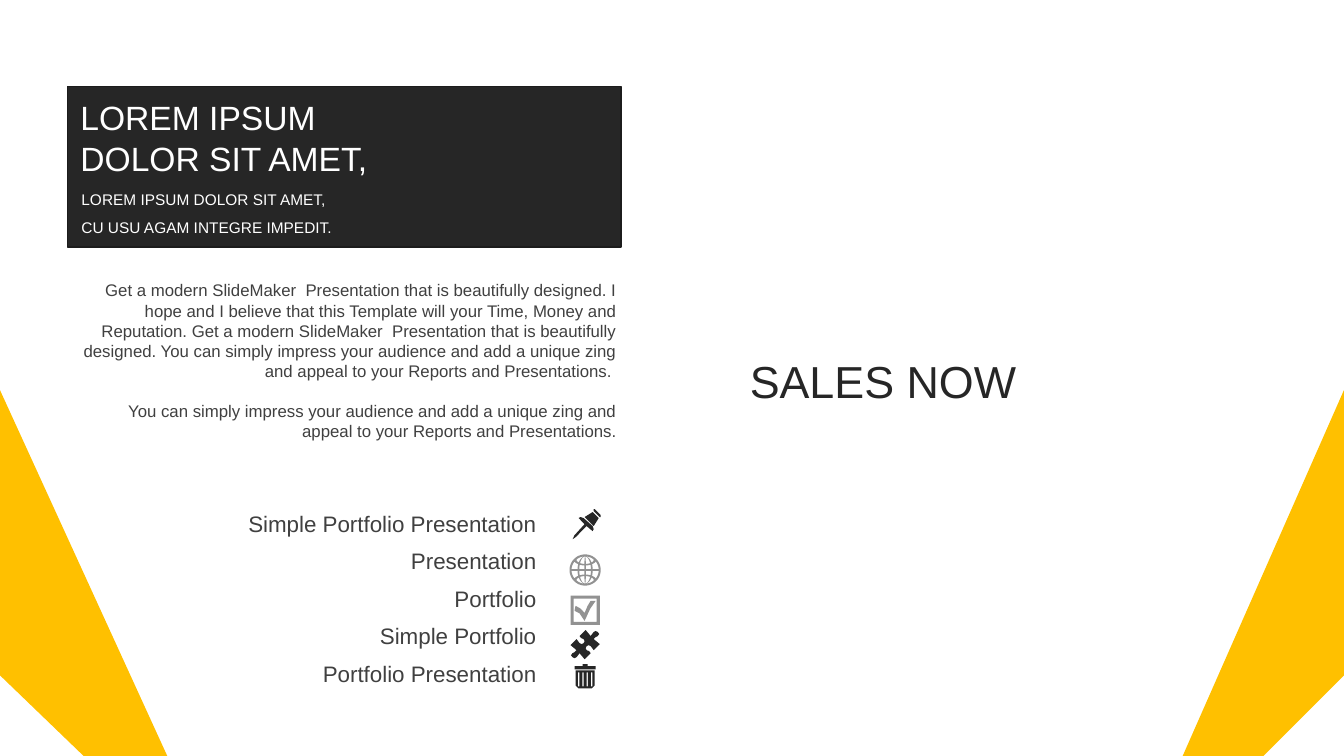
"""Build a portfolio slide with a heading panel, an icon list and corner wedges."""
import dataclasses
import math
import typing

import lxml.etree
import pptx
import pptx.dml.color
import pptx.enum.shapes
import pptx.enum.text
import pptx.oxml.ns
import pptx.util

COLUMNS, ROWS = 160, 90
CELL = pptx.util.Inches(1) / 12
ICON_STEP = 0.12
FONT = "Arial"
COLORS = {"ink": "262626", "edge": "1C1C1C", "body": "404040",
          "gray": "929292", "accent": "FFC000", "white": "FFFFFF"}
ALIGN = pptx.enum.text.PP_ALIGN
ANCHOR = pptx.enum.text.MSO_ANCHOR

Point = tuple[float, float]
Outline = list[Point]


@dataclasses.dataclass(frozen=True)
class Area:
    """A rectangle in grid columns and rows."""
    left: float
    top: float
    width: float
    height: float

    def emu(self) -> list[int]:
        """Return left, top, width and height in EMU."""
        return [cells(side) for side in dataclasses.astuple(self)]


@dataclasses.dataclass(frozen=True)
class Feature:
    """A list label with the icon beside it."""
    label: str
    column: float
    row: float
    color: str
    outlines: list[Outline]


def cells(count: float) -> int:
    """Convert grid cells to EMU."""
    return round(count * CELL)


def rgb(name: str) -> pptx.dml.color.RGBColor:
    """Look up a palette colour."""
    return pptx.dml.color.RGBColor.from_string(COLORS[name])


def box(x: float, y: float, half_width: float, half_height: float) -> Outline:
    """Return the corners of a rectangle around a centre."""
    return [(x + half_width * i, y + half_height * j)
            for i, j in ((-1, -1), (1, -1), (1, 1), (-1, 1))]


def globe_outlines() -> list[Outline]:
    """Return a disc and the gaps between its meridians and parallels."""
    radius, inner = 15.5, 13.5
    steps = [i / 8 for i in range(9)]
    outlines = [[(radius * math.cos(math.tau * i / 48),
                  radius * math.sin(math.tau * i / 48)) for i in range(48)]]
    bands = ((0.75, 0, 4.5, 4), (6, 4.5, 13.3, 0))
    for low, low_bend, high, high_bend in bands:
        for west, east in ((0.06, 0.43), (0.56, 1)):
            rim = ([(s, 0) for s in steps] + [(1, s) for s in steps]
                   + [(1 - s, 1) for s in steps] + [(0, 1 - s) for s in steps])
            gap = []
            for across, up in rim:
                u = west + (east - west) * across
                bottom, top = low + low_bend * u * u, high + high_bend * u * u
                y = bottom + (top - bottom) * up
                gap.append((u * math.sqrt(inner ** 2 - y ** 2), y))
            outlines += [[(x * i, y * j) for x, y in gap]
                         for i in (-1, 1) for j in (-1, 1)]
    return outlines


def puzzle_outlines() -> list[Outline]:
    """Return a puzzle piece made of one half and its half turn."""
    half = [(12.5, -12.5), (14, -10.5), (12.5, -8.5), (10.5, -7.5), (8.5, -5.5),
            (14.5, -0.5), (8.5, 5.5), (7, 3.5), (5.5, 1.5), (3.5, 0.5),
            (1.5, 1.5), (0.5, 3.5), (1.5, 5.5), (4, 6.5), (5.5, 8.5),
            (-0.5, 14.5), (-5.5, 8.5), (-7, 10.5), (-8.5, 12.5), (-10.5, 13.5)]
    return [half + [(-x, -y) for x, y in half]]


PIN = [
    [(-3, -6), (6, 2), (7, 5), (6, 7), (0, 2), (-11, 13), (-14, 15),
     (-12, 11), (-2, 0), (-8, -6), (-6, -7)],
    [(6, -12), (12, -6), (7, 2), (-2, -7)],
    [(8, -15), (14, -9), (14, -7), (13, -7), (7, -13), (7, -15)],
]
CHECKBOX = [
    box(0, 0, 14.5, 14.5), box(0, 0, 11.5, 11.5),
    [(-10.5, 0.5), (-9.5, -4.5), (-5, -2), (-0.5, 2.5), (2.5, -4.5),
     (5.5, -9.5), (10.5, -9.5), (5, -1.5), (-0.5, 10.5), (-5.5, 3)],
]
TRASH = [
    [(-9.5, -6), (9.5, -6), (9.5, 9), (6.5, 12), (-6.5, 12), (-9.5, 9)],
    [(-10.5, -10), (-2.5, -10), (-2.5, -12), (2.5, -12), (2.5, -10),
     (10.5, -10), (10.5, -7), (-10.5, -7)],
    *[box(x, 3, 0.7, 7) for x in (-6.45, -2.15, 2.15, 6.45)],
]
FEATURES = [
    Feature("Simple Portfolio Presentation", 69.84, 62.4, "ink", PIN),
    Feature("Presentation", 69.66, 67.86, "gray", globe_outlines()),
    Feature("Portfolio", 69.66, 72.66, "gray", CHECKBOX),
    Feature("Simple Portfolio", 69.66, 76.74, "ink", puzzle_outlines()),
    Feature("Portfolio Presentation", 69.66, 80.52, "ink", TRASH),
]
ABOUT = [
    "Get a modern SlideMaker  Presentation that is beautifully designed. I hope "
    "and I believe that this Template will your Time, Money and Reputation. Get "
    "a modern SlideMaker  Presentation that is beautifully designed. You can "
    "simply impress your audience and add a unique zing and appeal to your "
    "Reports and Presentations. ",
    "You can simply impress your audience and add a unique zing and appeal to "
    "your Reports and Presentations.",
]


def write(shape: typing.Any, lines: list[str], *, size: float, color: str,
          align: ALIGN = ALIGN.JUSTIFY, anchor: ANCHOR = ANCHOR.TOP,
          spacing: float = 1, gap: float = 0, inset: float = 0.1) -> None:
    """Write paragraphs into a shape with one format."""
    frame = shape.text_frame
    frame.word_wrap = True
    frame.auto_size = pptx.enum.text.MSO_AUTO_SIZE.SHAPE_TO_FIT_TEXT
    frame.vertical_anchor = anchor
    frame.margin_left = frame.margin_right = pptx.util.Inches(inset)
    for index, line in enumerate(lines):
        paragraph = frame.add_paragraph() if index else frame.paragraphs[0]
        paragraph.alignment = align
        paragraph.line_spacing = spacing
        paragraph.space_before = pptx.util.Pt(gap if index else 0)
        run = paragraph.add_run()
        run.text = line
        run.font.name = FONT
        run.font.size = pptx.util.Pt(size)
        run.font.color.rgb = rgb(color)


def paint(shape: typing.Any, color: str) -> None:
    """Give a shape a flat fill without line or shadow."""
    shape.shadow.inherit = False
    shape.fill.solid()
    shape.fill.fore_color.rgb = rgb(color)
    shape.line.fill.background()


def add_rectangle(shapes: typing.Any, area: Area, color: str) -> typing.Any:
    """Add a flat rectangle."""
    rectangle = shapes.add_shape(pptx.enum.shapes.MSO_SHAPE.RECTANGLE, *area.emu())
    paint(rectangle, color)
    return rectangle


def add_outlines(shapes: typing.Any, outlines: list[Outline], color: str,
                 column: float = 0, row: float = 0, step: float = 1) -> None:
    """Add closed outlines as one freeform."""
    placed = [[(cells(column + x * step), cells(row + y * step)) for x, y in outline]
              for outline in outlines]
    builder = shapes.build_freeform(*placed[0][0])
    for index, (start, *rest) in enumerate(placed):
        if index:
            builder.move_to(*start)
        builder.add_line_segments(rest, close=True)
    paint(builder.convert_to_shape(), color)


def main() -> None:
    """Build and save the slide."""
    deck = pptx.Presentation()
    deck.slide_width, deck.slide_height = cells(COLUMNS), cells(ROWS)
    shapes = deck.slides.add_slide(deck.slide_layouts[6]).shapes

    about = shapes.add_textbox(*Area(7.56, 32.76, 67.32, 20.64).emu())
    write(about, ABOUT, size=12, color="body", align=ALIGN.RIGHT, gap=14, inset=0.12)

    for index, feature in enumerate(FEATURES):
        label = shapes.add_textbox(*Area(26.28, 60.72 + 4.47 * index, 38.76, 3.84).emu())
        write(label, [feature.label], size=16, color="body", align=ALIGN.RIGHT, spacing=0.8)
        add_outlines(shapes, feature.outlines, feature.color,
                     feature.column, feature.row, ICON_STEP)

    sales = add_rectangle(shapes, Area(88.08, 41.52, 63.96, 7.68), "white")
    tint = next(sales.element.iter(pptx.oxml.ns.qn("a:srgbClr")))
    lxml.etree.SubElement(tint, pptx.oxml.ns.qn("a:alpha"), val="70000")
    write(sales, ["SALES NOW"], size=32, color="ink")

    heading = shapes.add_group_shape().shapes
    panel = add_rectangle(heading, Area(8.04, 10.32, 65.88, 19.08), "ink")
    panel.line.color.rgb = rgb("edge")
    panel.line.width = pptx.util.Pt(1)
    subtitle = heading.add_textbox(*Area(8.52, 21.12, 65.16, 7.44).emu())
    write(subtitle, ["LOREM IPSUM DOLOR SIT AMET,", "CU USU AGAM INTEGRE IMPEDIT."],
          size=11, color="white", anchor=ANCHOR.MIDDLE, spacing=1.5)
    title = heading.add_textbox(*Area(8.4, 10.92, 65.16, 10.92).emu())
    write(title, ["LOREM IPSUM", "DOLOR SIT AMET,"],
          size=24, color="white", anchor=ANCHOR.MIDDLE)

    for edge, reach in ((0, 19.92), (COLUMNS, -19.2)):
        wedge = [(edge, 46.44), (edge + reach, ROWS), (edge + reach / 2, ROWS), (edge, 80.4)]
        add_outlines(shapes, [wedge], "accent")

    deck.save("out.pptx")


if __name__ == "__main__":
    main()
